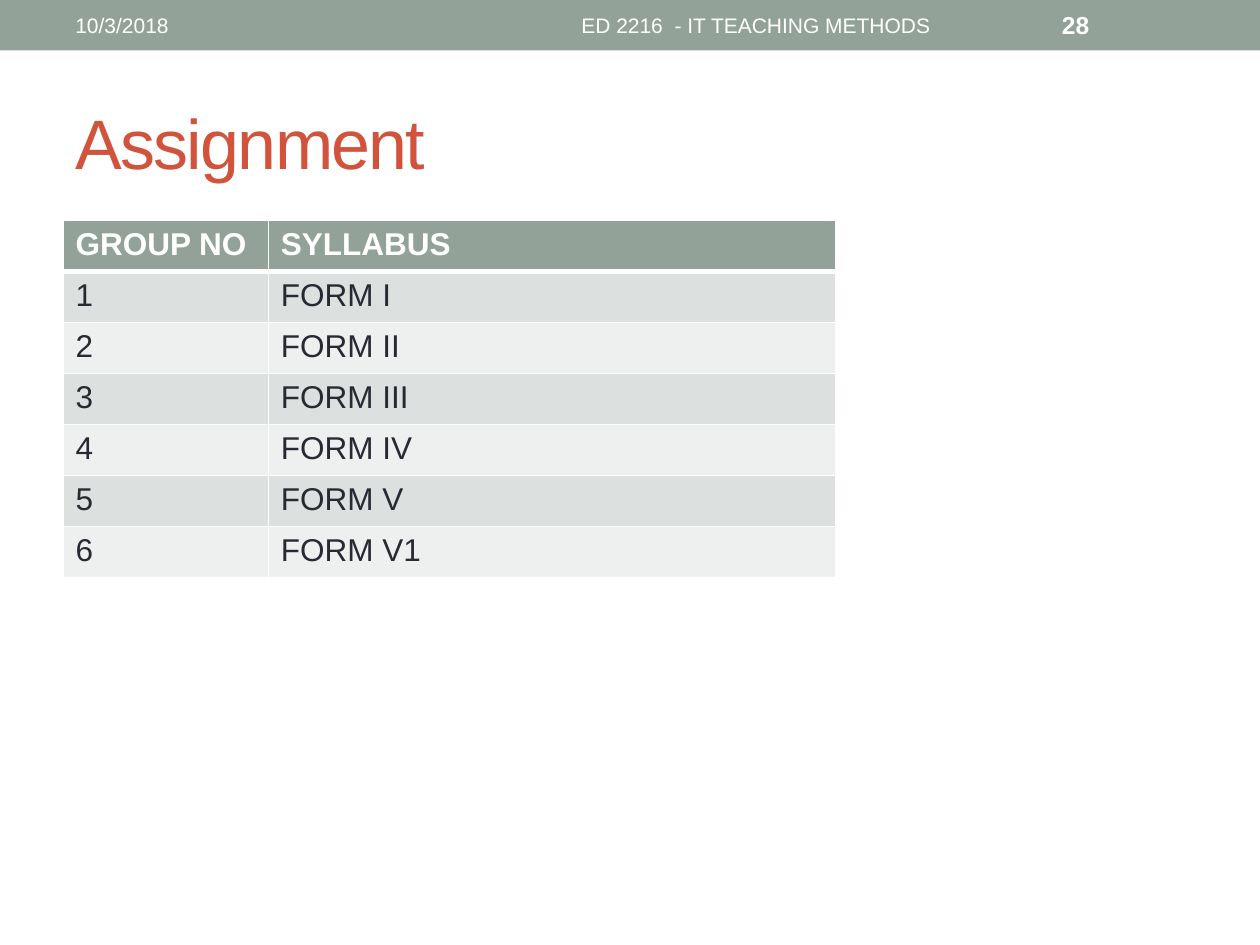
from lxml import etree
from pptx import Presentation
from pptx import util as u
from pptx.dml.color import RGBColor
from pptx.enum import shapes, text
from pptx.oxml.ns import qn

COLORS = {"sage": "93A299", "rust": "D2533C", "ink": "292934", "white": "FFFFFF",
          "band_dark": "DCE0DE", "band_light": "EEF0EF"}


class SlideBuilder:
    """Holds the deck style and the slide being built."""

    font = "Arial"

    def __init__(self, slide):
        self.slide = slide

    def color(self, name):
        return RGBColor.from_string(COLORS[name])

    def box(self, at):
        return [u.Inches(length) for length in at]

    def run(self, paragraph, words, size, color, bold=False):
        run = paragraph.add_run()
        run.text = words
        run.font.name = self.font
        run.font.size = u.Pt(size)
        run.font.bold = bold
        run.font.color.rgb = self.color(color)
        return run

    def band(self, at, color):
        band = self.slide.shapes.add_shape(shapes.MSO_SHAPE.RECTANGLE, *self.box(at))
        band.shadow.inherit = False
        band.fill.solid()
        band.fill.fore_color.rgb = self.color(color)
        band.line.fill.background()

    def title(self, at, words):
        title = self.slide.shapes.title
        title.left, title.top, title.width, title.height = self.box(at)
        frame = title.text_frame
        frame.vertical_anchor = text.MSO_ANCHOR.MIDDLE
        frame.paragraphs[0].alignment = text.PP_ALIGN.LEFT
        run = self.run(frame.paragraphs[0], words, 40, "rust")
        run.font._element.set("spc", "-100")

    def label(self, at, words, size=12, bold=False, align=text.PP_ALIGN.LEFT):
        frame = self.slide.shapes.add_textbox(*self.box(at)).text_frame
        frame.word_wrap = True
        frame.vertical_anchor = text.MSO_ANCHOR.MIDDLE
        frame.paragraphs[0].alignment = align
        self.run(frame.paragraphs[0], words, size, "white", bold)

    def borders(self, cell, top, bottom):
        properties = cell._tc.get_or_add_tcPr()
        widths = {"lnL": 1, "lnR": 1, "lnT": top, "lnB": bottom}
        for position, (side, width) in enumerate(widths.items()):
            line = etree.Element(qn(f"a:{side}"), w=str(u.Pt(width)))
            fill = etree.SubElement(line, qn("a:solidFill"))
            etree.SubElement(fill, qn("a:srgbClr"), val=COLORS["white"])
            properties.insert(position, line)

    def table(self, at, column_widths, row_height, rows):
        left, top = at
        size = (sum(column_widths), row_height * len(rows))
        table = self.slide.shapes.add_table(
            len(rows), len(column_widths), *self.box((left, top, *size))).table
        for column, width in zip(table.columns, column_widths):
            column.width = u.Inches(width)
        for r, values in enumerate(rows):
            table.rows[r].height = u.Inches(row_height)
            header = r == 0
            fill = "sage" if header else ("band_light", "band_dark")[r % 2]
            for c, value in enumerate(values):
                cell = table.cell(r, c)
                cell.fill.solid()
                cell.fill.fore_color.rgb = self.color(fill)
                self.borders(cell, top=3 if r == 1 else 1, bottom=3 if header else 1)
                self.run(cell.text_frame.paragraphs[0], value, 18,
                         "white" if header else "ink", header)


def main():
    deck = Presentation()
    deck.slide_width, deck.slide_height = u.Inches(10), u.Inches(7.5)
    builder = SlideBuilder(deck.slides.add_slide(deck.slide_layouts[5]))

    builder.band((0, 0, 10, 0.4), "sage")
    builder.title((0.5, 0.58, 9, 1.08), "Assignment")

    forms = ["I", "II", "III", "IV", "V", "V1"]
    groups = [(str(number), f"FORM {form}") for number, form in enumerate(forms, 1)]
    builder.table((0.5, 1.75), (1.63, 4.5), 0.405,
                  [("GROUP NO", "SYLLABUS"), *groups])

    builder.label((0.5, 0.02, 3.17, 0.36), "10/3/2018")
    builder.label((3.75, 0.02, 4.5, 0.36), "ED 2216  - IT TEACHING METHODS",
                  align=text.PP_ALIGN.CENTER)
    builder.label((8.33, 0.02, 1.17, 0.36), "28", size=14, bold=True)
    deck.save("out.pptx")


if __name__ == "__main__":
    main()
